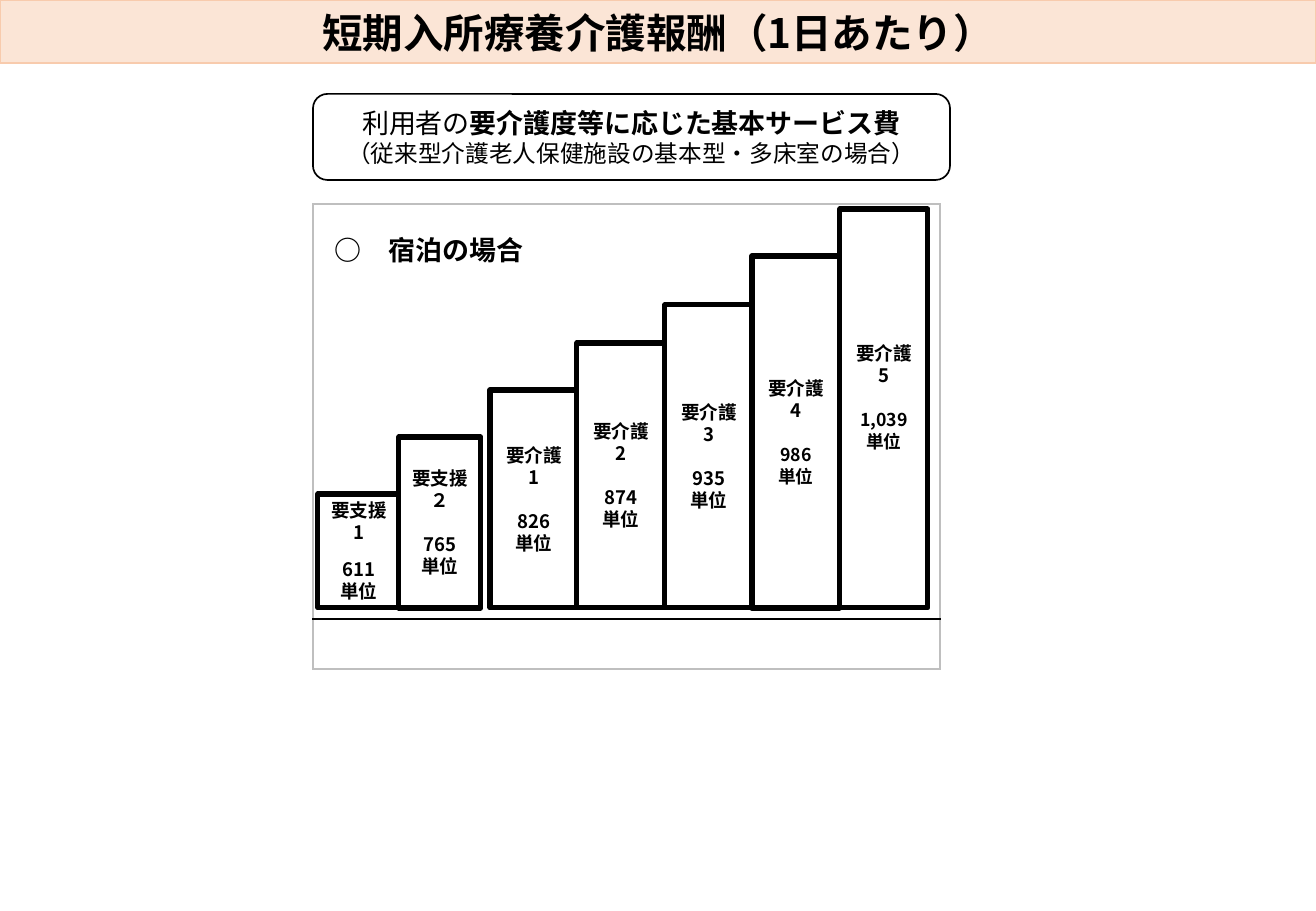
import lxml.etree
import pptx
import pptx.dml.color
import pptx.enum.shapes
import pptx.enum.text
import pptx.oxml.ns
import pptx.util

EMU_PER_PIXEL = 914400 / 121.5
SHAPES = pptx.enum.shapes.MSO_SHAPE
ALIGN = pptx.enum.text.PP_ALIGN
ANCHOR = pptx.enum.text.MSO_ANCHOR


def px(length):
    return pptx.util.Emu(round(length * EMU_PER_PIXEL))


def color(value):
    return pptx.dml.color.RGBColor.from_string(value)


class SlideBuilder:
    font_name = "Noto Sans CJK JP"
    ink = "000000"
    paper = "FFFFFF"

    def __init__(self, presentation):
        self.slide = presentation.slides.add_slide(presentation.slide_layouts[6])

    def add_text(self, frame, paragraphs, align=ALIGN.CENTER, **frame_format):
        """Each paragraph is (runs, format); each run is (text, size, bold)."""
        frame.word_wrap = True
        for name, value in frame_format.items():
            setattr(frame, name, value)
        for index, (runs, paragraph_format) in enumerate(paragraphs):
            paragraph = frame.paragraphs[0] if index == 0 else frame.add_paragraph()
            for name, value in {"alignment": align, **paragraph_format}.items():
                setattr(paragraph, name, value)
            for text, size, bold in runs:
                run = paragraph.add_run()
                run.text = text
                font_format = {"name": self.font_name, "size": pptx.util.Pt(size), "bold": bold}
                for name, value in font_format.items():
                    setattr(run.font, name, value)
                run.font.color.rgb = color(self.ink)
                east_asian = lxml.etree.SubElement(
                    run._r.get_or_add_rPr(), pptx.oxml.ns.qn("a:ea"))
                east_asian.set("typeface", self.font_name)

    def box(self, kind, bounds, paragraphs, fill=paper, line=ink, width=1, **frame_format):
        shape = self.slide.shapes.add_shape(kind, *map(px, bounds))
        shape.shadow.inherit = False
        shape.fill.solid()
        shape.fill.fore_color.rgb = color(fill)
        shape.line.color.rgb = color(line)
        shape.line.width = pptx.util.Pt(width)
        self.add_text(shape.text_frame, paragraphs, **frame_format)

    def label(self, bounds, paragraphs):
        shape = self.slide.shapes.add_textbox(*map(px, bounds))
        self.add_text(shape.text_frame, paragraphs, align=ALIGN.LEFT)

    def border(self, cell, side, line, width):
        properties = cell._tc.get_or_add_tcPr()
        edge = lxml.etree.SubElement(
            properties, pptx.oxml.ns.qn("a:" + side), w=str(pptx.util.Pt(width)))
        fill = lxml.etree.SubElement(edge, pptx.oxml.ns.qn("a:solidFill"))
        lxml.etree.SubElement(fill, pptx.oxml.ns.qn("a:srgbClr"), val=line)

    def frame_table(self, left, top, width, row_heights, outline):
        table = self.slide.shapes.add_table(
            len(row_heights), 1, px(left), px(top), px(width), px(sum(row_heights))).table
        last = len(row_heights) - 1
        for index, height in enumerate(row_heights):
            table.rows[index].height = px(height)
            cell = table.cell(index, 0)
            for side in ("lnL", "lnR", "lnT", "lnB"):
                inner = (side == "lnT" and index > 0) or (side == "lnB" and index < last)
                self.border(cell, side, self.ink if inner else outline, 1)
            cell.fill.solid()
            cell.fill.fore_color.rgb = color(self.paper)


def main():
    presentation = pptx.Presentation()
    presentation.slide_width, presentation.slide_height = px(1316), px(911)
    builder = SlideBuilder(presentation)

    # Frame around the bars
    builder.frame_table(313, 204, 627, [415, 50], "BFBFBF")

    # Bars: level, units, top, size of the units, gap above them, bottom inset
    bars = [
        ("要支援1", "611", 494, 11, 9, 6),
        ("要支援２", "765", 437, 11, 13, 6),
        ("要介護1", "826", 390, 11, 13, 6),
        ("要介護2", "874", 343, 11, 13, 6),
        ("要介護3", "935", 305, 11, 13, 6),
        ("要介護4", "986", 256, 10.5, 13, 6),
        ("要介護5", "1,039", 209, 10.5, 13, 28),
    ]
    baseline, support_count = 608, 2
    pitch = {"line_spacing": pptx.util.Pt(13)}
    for index, (level, units, top, size, gap, inset) in enumerate(bars):
        if index < support_count:
            left, width = 318 + 81 * index, 82
        else:
            left, width = 490 + 175 * (index - support_count) // 2, 88
        builder.box(
            SHAPES.RECTANGLE, (left, top, width, baseline - top),
            [([(level, 11, True)], pitch),
             ([(units, size, True)], {**pitch, "space_before": pptx.util.Pt(gap)}),
             ([("単位", size, True)], pitch)],
            width=3, vertical_anchor=ANCHOR.MIDDLE, margin_bottom=px(inset))

    # Subject of the fees
    builder.box(
        SHAPES.ROUNDED_RECTANGLE, (313, 94, 637, 86),
        [([("利用者の", 16, False), ("要介護度等に応じた基本サービス費", 16, True)],
          {"line_spacing": pptx.util.Pt(19)}),
         ([("（従来型介護老人保健施設の基本型・多床室の場合）", 14, False)],
          {"line_spacing": pptx.util.Pt(17)})],
        vertical_anchor=ANCHOR.MIDDLE)

    # Heading of the bars
    builder.label((323, 228, 256, 45),
                  [([("○　宿泊の場合", 16, True)], {"line_spacing": pptx.util.Pt(19)})])

    # Title band
    builder.box(
        SHAPES.RECTANGLE, (0, 0, 1316, 63),
        [([("短期入所療養介護報酬（1日あたり）", 24, True)], {})],
        fill="FBE5D6", line="F8CBAD", vertical_anchor=ANCHOR.BOTTOM)

    presentation.save("out.pptx")


if __name__ == "__main__":
    main()
